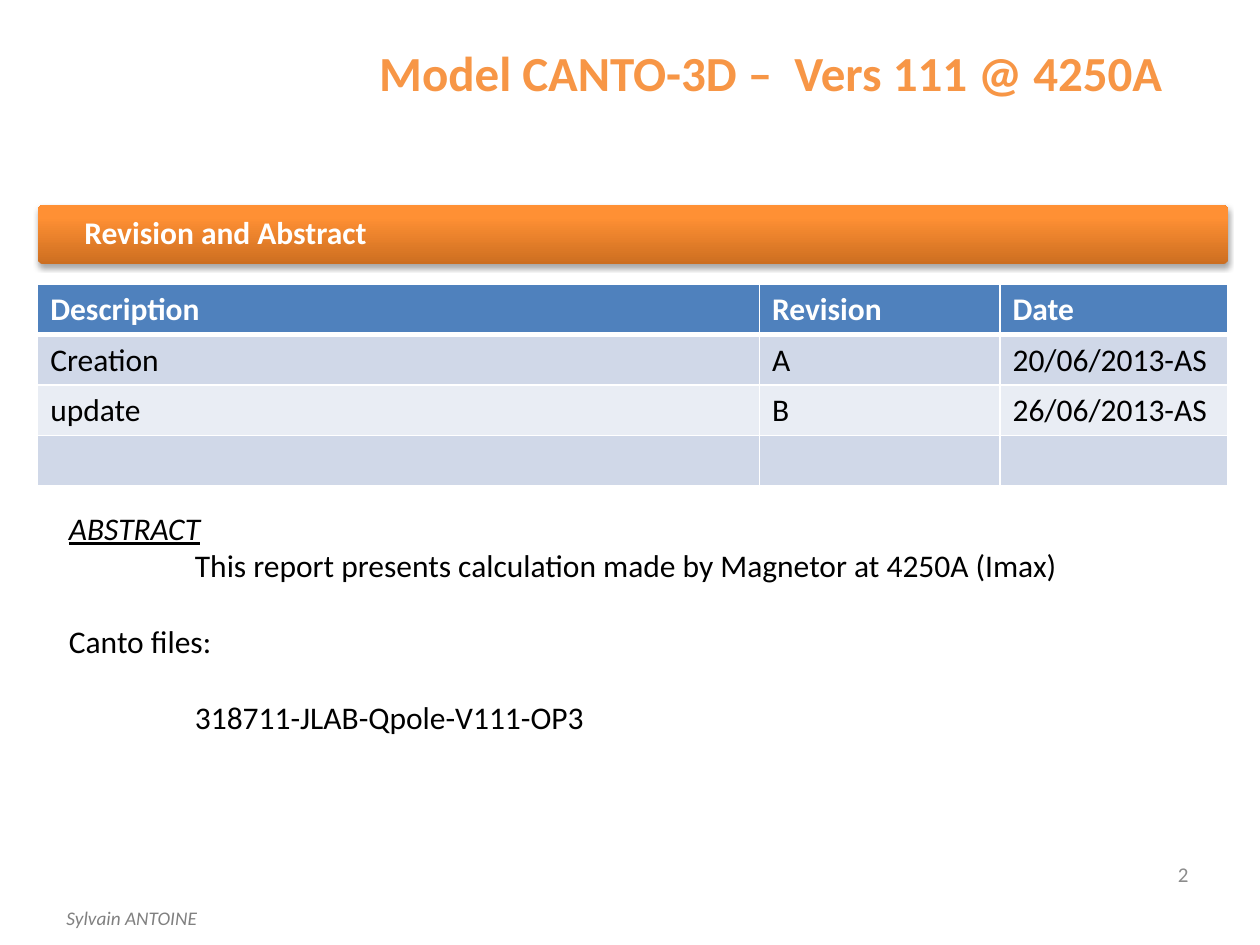
from copy import deepcopy

from lxml import etree
from pptx import Presentation
from pptx.dml.color import RGBColor
from pptx.enum.shapes import MSO_SHAPE
from pptx.enum.text import MSO_ANCHOR, PP_ALIGN
from pptx.oxml.ns import qn
from pptx.util import Cm, Pt

ROUND = MSO_SHAPE.ROUNDED_RECTANGLE
MIDDLE, TOP = MSO_ANCHOR.MIDDLE, MSO_ANCHOR.TOP
LEFT, CENTER, RIGHT = PP_ALIGN.LEFT, PP_ALIGN.CENTER, PP_ALIGN.RIGHT
FONT = "Calibri"
WHITE, BLACK = "FFFFFF", "000000"


def color(code):
    return RGBColor.from_string(code)


def style(para, size, tint, bold=False, slant=False):
    for run in para.runs:
        font = run.font
        font.name, font.size = FONT, Pt(size)
        font.bold, font.italic = bold, slant
        font.color.rgb = color(tint)


def add_text(slide, box, text, size, tint, align=LEFT, anchor=TOP,
             wrap=False, **look):
    frame = slide.shapes.add_textbox(*map(Cm, box)).text_frame
    frame.word_wrap = wrap
    frame.vertical_anchor = anchor
    frame.text = text
    for para in frame.paragraphs:
        para.alignment = align
        style(para, size, tint, **look)
    return frame


def add_banner(slide, box, text):
    left, top, width, height = box
    bar = slide.shapes.add_shape(ROUND, *map(Cm, box))
    bar.adjustments[0] = 0.1
    bar.line.fill.background()
    bar.fill.gradient()
    bar.fill.gradient_angle = 90
    props = bar.element.spPr
    stops = props.find(qn("a:gradFill")).find(qn("a:gsLst"))
    stops.append(deepcopy(stops[-1]))
    shades = [(0, "CC6E20"), (0.8, "FF9034"), (1, "FF9136")]
    for stop, (place, shade) in zip(bar.fill.gradient_stops, shades):
        stop.position = place
        stop.color.rgb = color(shade)
    bar.shadow.inherit = False
    cast = etree.SubElement(
        props.find(qn("a:effectLst")), qn("a:outerShdw"),
        blurRad=str(Pt(3.1)), dist=str(Pt(1.8)), dir="5400000", rotWithShape="0")
    shade = etree.SubElement(cast, qn("a:srgbClr"), val=BLACK)
    etree.SubElement(shade, qn("a:alpha"), val="35000")
    frame = add_text(slide, (left + 0.76, top, width - 0.76, height), text,
                     18, WHITE, anchor=MIDDLE, wrap=True, bold=True)
    frame.margin_left = frame.margin_right = Cm(0.18)
    frame.paragraphs[0].line_spacing = 0.9


def add_border(cell, side, width):
    line = etree.SubElement(cell._tc.get_or_add_tcPr(), qn("a:" + side),
                            w=str(Pt(width)))
    fill = etree.SubElement(line, qn("a:solidFill"))
    etree.SubElement(fill, qn("a:srgbClr"), val=WHITE)


def add_grid(slide, box, widths, rows):
    table = slide.shapes.add_table(len(rows), len(widths), *map(Cm, box)).table
    for col, width in zip(table.columns, widths):
        col.width = Cm(width)
    for i, row in enumerate(rows):
        head = i == 0
        fill = "4F81BD" if head else ("E9EDF4", "D0D8E8")[i % 2]
        for j, text in enumerate(row):
            cell = table.cell(i, j)
            for side in ("lnL", "lnR", "lnT", "lnB"):
                thick = (head and side == "lnB") or (i == 1 and side == "lnT")
                add_border(cell, side, 3 if thick else 1)
            cell.fill.solid()
            cell.fill.fore_color.rgb = color(fill)
            cell.text = text
            style(cell.text_frame.paragraphs[0], 18,
                  WHITE if head else BLACK, bold=head)


def add_body(slide, box, items):
    text = "\n".join(item[0] for item in items)
    frame = add_text(slide, box, text, 18, BLACK, wrap=True)
    for para, (_, inset, gap) in zip(frame.paragraphs, items):
        para._p.get_or_add_pPr().set("marL", str(Cm(inset)))
        para.space_before = Pt(gap)
    font = frame.paragraphs[0].runs[0].font
    font.italic = font.underline = True


def main():
    deck = Presentation()
    deck.slide_width, deck.slide_height = Cm(25.4), Cm(19.05)
    slide = deck.slides.add_slide(deck.slide_layouts[6])
    add_text(slide, (1.09, 18.14, 3.18, 0.74), "Sylvain ANTOINE", 11,
             "808080", slant=True)
    add_text(slide, (7.32, 0.74, 16.43, 1.45),
             "Model CANTO-3D –  Vers 111 @ 4250A", 28, "F79646", CENTER, bold=True)
    add_text(slide, (18.29, 17.12, 5.92, 1.02), "2", 12, "8C8C8C", RIGHT,
             MIDDLE, True)
    add_banner(slide, (0.76, 4.13, 24, 1.2), "Revision and Abstract")
    add_grid(slide, (0.76, 5.73, 24, 4.06), (14.55, 4.85, 4.6), [
        ("Description", "Revision", "Date"),
        ("Creation", "A", "20/06/2013-AS"),
        ("update", "B", "26/06/2013-AS"),
        ("", "", "")])
    add_body(slide, (1.14, 10.13, 23.6, 6.4), [
        ("ABSTRACT", 0, 0),
        ("This report presents calculation made by Magnetor at 4250A (Imax)", 2.54, 0),
        ("Canto files:", 0, 21.6),
        ("318711-JLAB-Qpole-V111-OP3", 2.54, 21.6)])
    deck.save("out.pptx")


if __name__ == "__main__":
    main()
